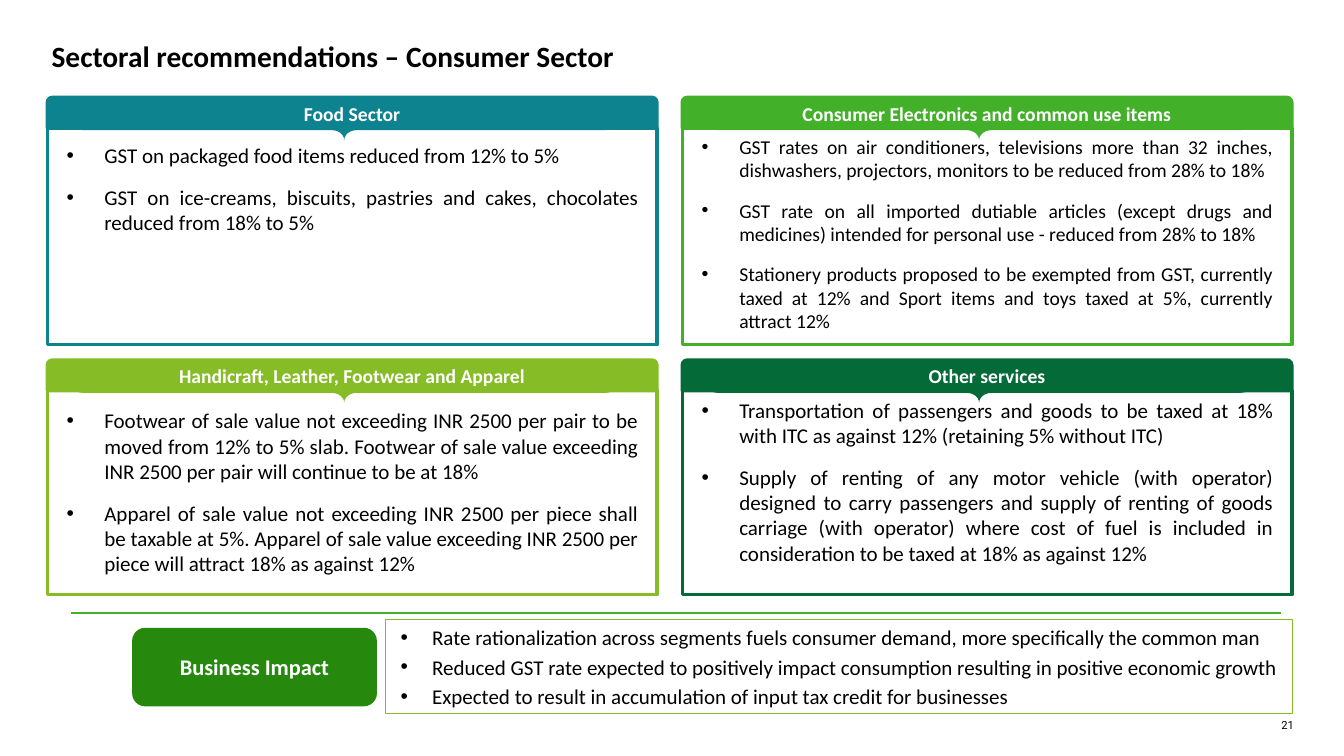
from dataclasses import dataclass

from lxml import etree
from pptx import Presentation
from pptx.dml.color import RGBColor
from pptx.enum.shapes import MSO_CONNECTOR, MSO_SHAPE
from pptx.enum.text import MSO_ANCHOR, MSO_AUTO_SIZE, PP_ALIGN
from pptx.oxml.ns import qn
from pptx.util import Cm, Pt

RECTANGLE = MSO_SHAPE.RECTANGLE
ROUNDED = MSO_SHAPE.ROUNDED_RECTANGLE
ROUNDED_TOP = MSO_SHAPE.ROUND_2_SAME_RECTANGLE
BRACE = MSO_SHAPE.LEFT_BRACE
STRAIGHT = MSO_CONNECTOR.STRAIGHT
TOP, MIDDLE = MSO_ANCHOR.TOP, MSO_ANCHOR.MIDDLE
LEFT, CENTER, RIGHT, JUSTIFY = PP_ALIGN.LEFT, PP_ALIGN.CENTER, PP_ALIGN.RIGHT, PP_ALIGN.JUSTIFY


@dataclass(frozen=True)
class Theme:
    """Colours, fonts and type sizes of the slide."""
    text: str = "000000"
    inverse: str = "FFFFFF"
    teal: str = "0D8390"
    green: str = "43B02A"
    lime: str = "86BC25"
    forest: str = "046A38"
    impact: str = "26890D"
    font: str = "Calibri"
    number_font: str = "Roboto"
    title_size: float = 21
    impact_size: float = 16
    body_size: float = 15
    small_size: float = 14
    number_size: float = 8


THEME = Theme()
COMPARISON_LAYOUT = 4
HEADER_HEIGHT = 0.78
COLUMNS = (1.19, 17.19)
PANEL_WIDTH = 15.37
ROWS = ((2.45, 6.24), (9.07, 5.92))

PANELS = [
    ("Food Sector", THEME.teal, THEME.body_size, 0.23, 2.95, [
        "GST on packaged food items reduced from 12% to 5%",
        "GST on ice-creams, biscuits, pastries and cakes, chocolates reduced from 18% to 5%",
    ]),
    ("Consumer Electronics and common use items", THEME.green, THEME.small_size, 0.03, 5.54, [
        "GST rates on air conditioners, televisions more than 32 inches, dishwashers, projectors, "
        "monitors to be reduced from 28% to 18%",
        "GST rate on all imported dutiable articles (except drugs and medicines) intended for "
        "personal use - reduced from 28% to 18%",
        "Stationery products proposed to be exempted from GST, currently taxed at 12% and Sport "
        "items and toys taxed at 5%, currently attract 12%",
    ]),
    ("Handicraft, Leather, Footwear and Apparel", THEME.lime, THEME.body_size, 0.3, 4.88, [
        "Footwear of sale value not exceeding INR 2500 per pair to be moved from 12% to 5% slab. "
        "Footwear of sale value exceeding INR 2500 per pair will continue to be at 18%",
        "Apparel of sale value not exceeding INR 2500 per piece shall be taxable at 5%. Apparel of "
        "sale value exceeding INR 2500 per piece will attract 18% as against 12%",
    ]),
    ("Other services", THEME.forest, THEME.body_size, 0.03, 5.54, [
        "Transportation of passengers and goods to be taxed at 18% with ITC as against 12% "
        "(retaining 5% without ITC)",
        "Supply of renting of any motor vehicle (with operator) designed to carry passengers and "
        "supply of renting of goods carriage (with operator) where cost of fuel is included in "
        "consideration to be taxed at 18% as against 12%",
    ]),
]
IMPACTS = [
    "Rate rationalization across segments fuels consumer demand, more specifically the common man",
    "Reduced GST rate expected to positively impact consumption resulting in positive economic growth",
    "Expected to result in accumulation of input tax credit for businesses",
]


def place(shape, left, top, width, height):
    """Move and size a shape, in centimetres."""
    shape.left, shape.top, shape.width, shape.height = map(Cm, (left, top, width, height))


def add_shape(slide, kind, box, fill=None, line=None, weight=2.25):
    """Add a flat shape with an optional fill and outline."""
    shape = slide.shapes.add_shape(kind, *map(Cm, box))
    shape.shadow.inherit = False
    if fill:
        shape.fill.solid()
        shape.fill.fore_color.rgb = RGBColor.from_string(fill)
    else:
        shape.fill.background()
    if line:
        shape.line.color.rgb = RGBColor.from_string(line)
        shape.line.width = Pt(weight)
    else:
        shape.line.fill.background()
    return shape


def set_frame(frame, margins, anchor):
    """Set wrapping, anchor and the left, top, right and bottom insets."""
    frame.auto_size = MSO_AUTO_SIZE.NONE
    frame.word_wrap = True
    frame.vertical_anchor = anchor
    frame.margin_left, frame.margin_top, frame.margin_right, frame.margin_bottom = map(Cm, margins)


def set_font(paragraph, size, color=THEME.text, bold=False, name=THEME.font):
    """Format all the text of a paragraph."""
    font = paragraph.font
    font.name, font.size, font.bold = name, Pt(size), bold
    font.color.rgb = RGBColor.from_string(color)


def set_label(shape, text, size, color=THEME.inverse, align=CENTER, bold=True,
              name=THEME.font, anchor=MIDDLE):
    """Write one line of text in a shape without insets."""
    set_frame(shape.text_frame, (0, 0, 0, 0), anchor)
    shape.text_frame.text = text
    paragraph = shape.text_frame.paragraphs[0]
    paragraph.alignment = align
    set_font(paragraph, size, color, bold, name)


def set_bullets(frame, items, size, indent, align, before, after):
    """Write a bulleted list with a hanging indent."""
    frame.text = "\n".join(items)
    for index, paragraph in enumerate(frame.paragraphs):
        properties = paragraph._p.get_or_add_pPr()
        properties.set("marL", str(Cm(indent)))
        properties.set("indent", str(-Cm(indent)))
        etree.SubElement(properties, qn("a:buFont")).set("typeface", "Arial")
        etree.SubElement(properties, qn("a:buChar")).set("char", "•")
        paragraph.alignment = align
        paragraph.space_before = Pt(before if index else 0)
        paragraph.space_after = Pt(after)
        set_font(paragraph, size)


def add_title(slide, left, top, width, height):
    """Fill the title placeholder."""
    place(slide.shapes.title, left, top, width, height)
    set_label(slide.shapes.title, "Sectoral recommendations – Consumer Sector",
              THEME.title_size, THEME.text, LEFT, anchor=TOP)


def add_panel(slide, placeholder, panel, left, top, width, height):
    """Build a sector panel: frame, pointer, header and list."""
    heading, color, size, list_offset, list_height, items = panel
    body_top = top + HEADER_HEIGHT
    add_shape(slide, RECTANGLE, (left, body_top, width, height - HEADER_HEIGHT), line=color)
    depth, span = 0.5, 13.77
    center_x, center_y = left + width / 2 - 0.2, body_top + 0.05
    pointer = add_shape(slide, BRACE, (center_x - depth / 2, center_y - span / 2, depth, span), color)
    pointer.rotation = 270
    pointer.adjustments[0] = 0.62
    header = add_shape(slide, ROUNDED_TOP, (left, top, width, HEADER_HEIGHT), color, color)
    set_label(header, heading, THEME.small_size)
    place(placeholder, left + 0.24, body_top + list_offset, width - 0.46, list_height)
    set_frame(placeholder.text_frame, (0.25, 0.13, 0.25, 0.13), TOP)
    set_bullets(placeholder.text_frame, items, size, 0.95, JUSTIFY, 6, 6)


def add_impact(slide, left, top, width, height):
    """Build the business impact strip below its dividing line."""
    divider = slide.shapes.add_connector(
        STRAIGHT, Cm(left), Cm(top), Cm(left + 30.48), Cm(top))
    divider.line.color.rgb = RGBColor.from_string(THEME.green)
    divider.line.width = Pt(1.5)
    etree.SubElement(divider._element.spPr, qn("a:effectLst"))
    list_left, list_top = left + 7.9, top + 0.18
    box = add_shape(slide, RECTANGLE, (list_left, list_top, left + width - list_left, height - 0.18),
                    line=THEME.lime, weight=0.5)
    set_frame(box.text_frame, (0.4, 0.25, 0.2, 0.25), MIDDLE)
    set_bullets(box.text_frame, IMPACTS, THEME.body_size, 0.79, LEFT, 0, 3)
    label = add_shape(slide, ROUNDED, (left + 1.53, top + 0.38, 6.17, 1.98), THEME.impact)
    set_label(label, "Business Impact", THEME.impact_size)


def add_slide_number(slide, left, top, width, height):
    """Write the slide number in the bottom corner."""
    box = slide.shapes.add_textbox(*map(Cm, (left, top, width, height)))
    set_label(box, "21", THEME.number_size, THEME.text, RIGHT, False, THEME.number_font, TOP)


def main():
    """Build and save the presentation."""
    presentation = Presentation()
    presentation.slide_width, presentation.slide_height = Cm(33.87), Cm(19.05)
    slide = presentation.slides.add_slide(presentation.slide_layouts[COMPARISON_LAYOUT])
    add_title(slide, 1.3, 0.97, 31.32, 0.94)
    bodies = list(slide.placeholders)[1:]
    for index, (body, panel) in enumerate(zip(bodies, PANELS)):
        row, column = divmod(index, len(COLUMNS))
        top, height = ROWS[row]
        add_panel(slide, body, panel, COLUMNS[column], top, PANEL_WIDTH, height)
    add_impact(slide, 1.8, 15.44, 30.76, 2.54)
    add_slide_number(slide, 31.75, 18.11, 0.86, 0.33)
    presentation.save("out.pptx")


if __name__ == "__main__":
    main()
